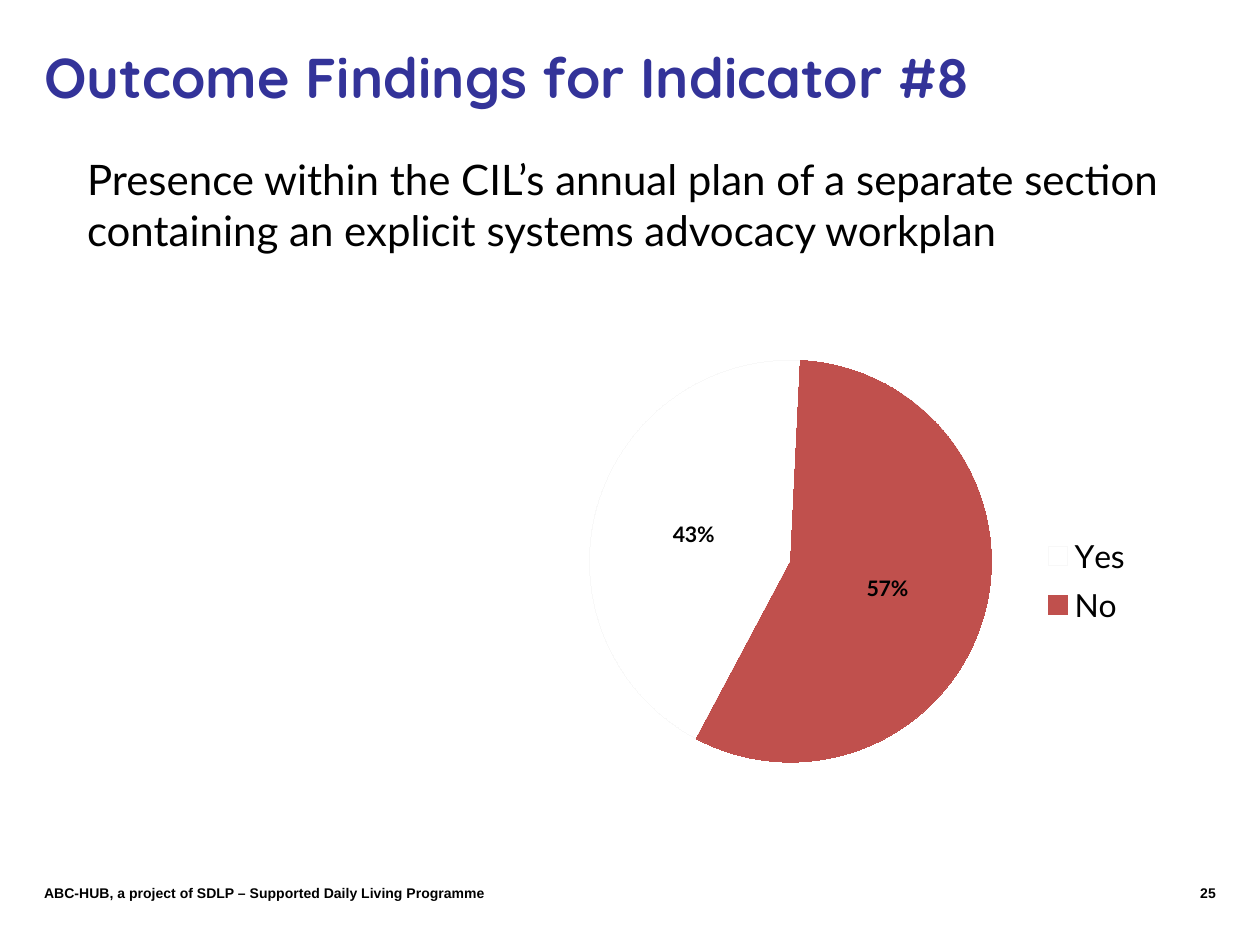
from lxml import etree
from pptx import Presentation
from pptx.chart.data import CategoryChartData
from pptx.dml.color import RGBColor
from pptx.enum.chart import XL_CHART_TYPE, XL_LABEL_POSITION, XL_LEGEND_POSITION
from pptx.enum.text import MSO_ANCHOR, PP_ALIGN
from pptx.oxml import parse_xml
from pptx.oxml.ns import nsdecls, qn
from pptx.util import Cm, Pt

PIE = XL_CHART_TYPE.PIE
CENTER = XL_LABEL_POSITION.CENTER
LEGEND_RIGHT = XL_LEGEND_POSITION.RIGHT
MIDDLE, TOP = MSO_ANCHOR.MIDDLE, MSO_ANCHOR.TOP
LEFT, RIGHT = PP_ALIGN.LEFT, PP_ALIGN.RIGHT

BLACK, INDIGO, WHITE, RED, PALE_GREY = "000000", "333399", "FFFFFF", "C0504D", "F8F8F8"


def rgb(value):
    return RGBColor.from_string(value)


def style_font(font, name, size, color=BLACK, bold=False):
    font.name, font.size, font.bold = name, Pt(size), bold
    font.color.rgb = rgb(color)


def place(shape, left, top, width, height):
    shape.left, shape.top = Cm(left), Cm(top)
    shape.width, shape.height = Cm(width), Cm(height)


def write(shape, text, anchor, align):
    """Fill the shape with one wrapped paragraph and return that paragraph."""
    frame = shape.text_frame
    frame.word_wrap = True
    frame.vertical_anchor = anchor
    frame.text = text
    paragraph = frame.paragraphs[0]
    paragraph.alignment = align
    return paragraph


def add_title(slide, text):
    title = slide.shapes.title
    place(title, 0.64, 0.43, 21.39, 2.21)
    style_font(write(title, text, MIDDLE, LEFT).font, "Quicksand", 32, INDIGO, True)


def add_statement(slide, text):
    body = slide.placeholders[1]
    place(body, -0.2, 2.97, 23.93, 2.74)
    paragraph = write(body, text, TOP, LEFT)
    paragraph.space_before = Pt(0)
    properties = paragraph._p.get_or_add_pPr()
    properties.set("marL", str(Cm(1.7)))
    properties.set("indent", "0")
    etree.SubElement(properties, qn("a:buNone"))
    style_font(paragraph.font, "Lato", 24)


def add_footer_text(slide, text, left, width, align):
    footer = slide.shapes.add_textbox(Cm(left), Cm(17.71), Cm(width), Cm(0.6))
    style_font(write(footer, text, TOP, align).font, "Arial", 8, bold=True)


def manual_layout(x, y, width, height, target=""):
    """Return a chart layout element; positions are fractions of the chart area."""
    return parse_xml(
        f'<c:layout {nsdecls("c")}><c:manualLayout>{target}'
        '<c:xMode val="edge"/><c:yMode val="edge"/>'
        f'<c:x val="{x}"/><c:y val="{y}"/><c:w val="{width}"/><c:h val="{height}"/>'
        "</c:manualLayout></c:layout>"
    )


def set_layout(parent, layout, index):
    for old in parent.findall(qn("c:layout")):
        parent.remove(old)
    parent.insert(index, layout)


def add_answer_pie(slide, shares, colors):
    data = CategoryChartData(number_format="0%")
    data.categories = list(shares)
    data.add_series("Series 1", list(shares.values()))
    chart = slide.shapes.add_chart(
        PIE, Cm(10.72), Cm(6.91), Cm(12.57), Cm(8.81), data
    ).chart
    chart.has_title = False
    style_font(chart.font, "Lato", 10)

    chart.has_legend = True
    legend = chart.legend
    legend.position = LEGEND_RIGHT
    legend.include_in_layout = False
    style_font(legend.font, "Lato", 18.2)
    set_layout(legend._element, manual_layout(0.79, 0.42, 0.2, 0.25), 1)

    pie = chart.plots[0]
    pie.vary_by_categories = True
    etree.SubElement(pie._element, qn("c:firstSliceAng")).set("val", "208")
    inner = '<c:layoutTarget val="inner"/>'
    set_layout(pie._element.getparent(), manual_layout(0.09, 0.04, 0.65, 0.92, inner), 0)

    for index, (fill, outline) in enumerate(colors):
        slice_format = pie.series[0].points[index].format
        slice_format.fill.solid()
        slice_format.fill.fore_color.rgb = rgb(fill)
        slice_format.line.color.rgb = rgb(outline)

    labels = pie.series[0].data_labels
    labels.show_value = True
    labels.show_percentage = False
    labels.number_format, labels.number_format_is_linked = "0%", False
    labels.position = CENTER
    style_font(labels.font, "Lato", 12.2, bold=True)


def main():
    deck = Presentation()
    deck.slide_width, deck.slide_height = Cm(25.4), Cm(19.05)
    slide = deck.slides.add_slide(deck.slide_layouts[1])
    add_title(slide, "Outcome Findings for Indicator #8")
    add_statement(
        slide,
        "Presence within the CIL’s annual plan of a separate section "
        "containing an explicit systems advocacy workplan",
    )
    add_answer_pie(slide, {"Yes": 0.43, "No": 0.57}, [(WHITE, PALE_GREY), (RED, RED)])
    add_footer_text(
        slide,
        "ABC-HUB, a project of SDLP – Supported Daily Living Programme",
        0.64, 12.7, LEFT,
    )
    add_footer_text(slide, "25", 23.06, 1.7, RIGHT)
    deck.save("out.pptx")


if __name__ == "__main__":
    main()
